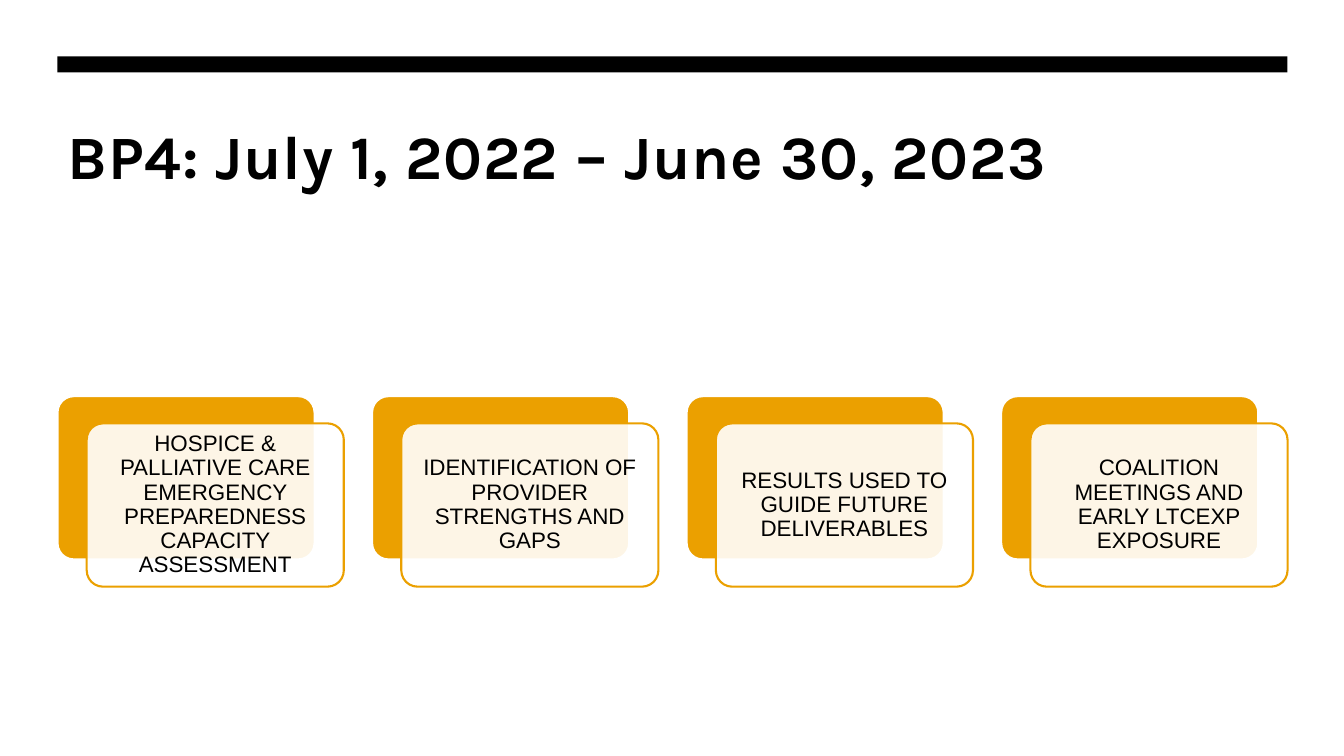
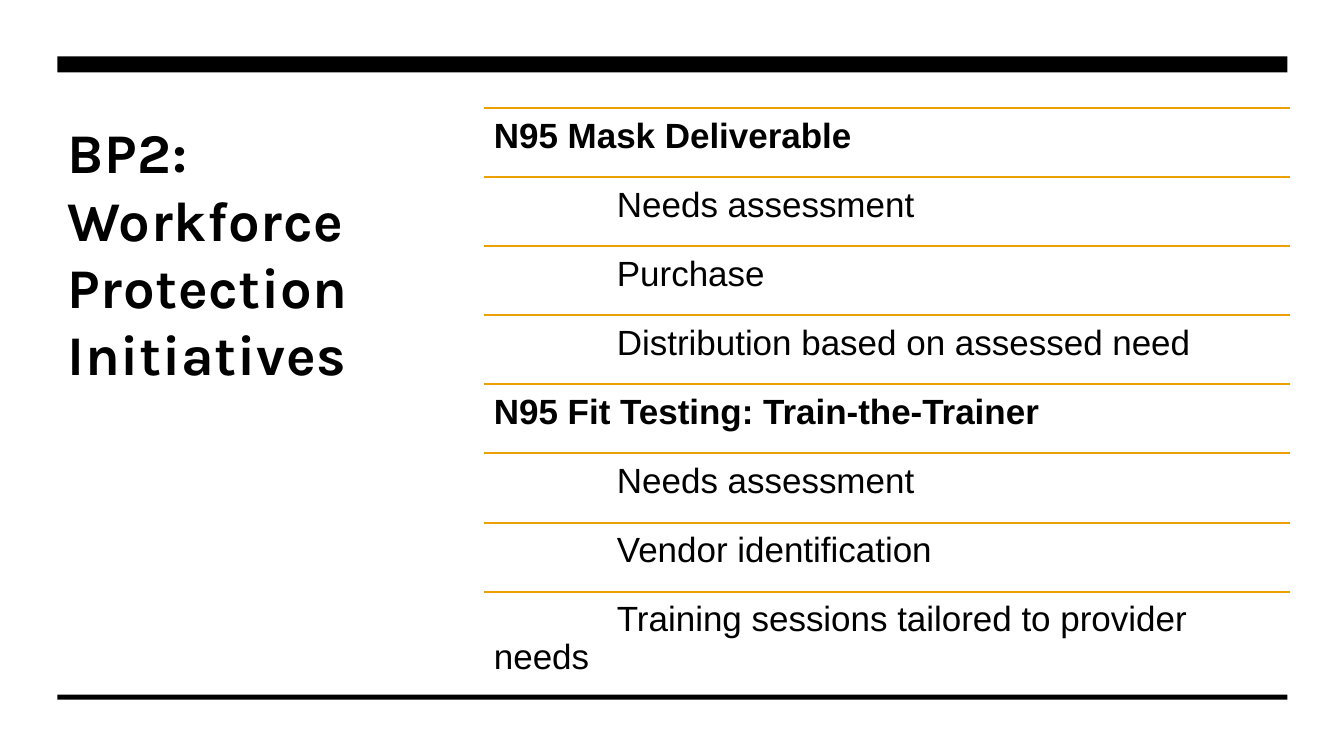
from dataclasses import dataclass

from lxml import etree
from pptx import Presentation
from pptx import util as u
from pptx.dml.color import RGBColor
from pptx.enum import shapes, text
from pptx.oxml.ns import qn


@dataclass(frozen=True)
class Theme:
    """Colours, fonts, type sizes and shared margins."""
    ink: str = "000000"
    paper: str = "FFFFFF"
    accent: str = "EBA000"
    title_font: str = "Karla"
    body_font: str = "Arial"
    title_size: int = 44
    side_title_size: int = 40
    card_size: int = 16
    row_size: int = 25
    line_width: float = 1.5
    left: float = 0.57
    width: float = 12.2


THEME = Theme()
STEPS = [
    "HOSPICE & PALLIATIVE CARE EMERGENCY PREPAREDNESS CAPACITY ASSESSMENT",
    "IDENTIFICATION OF PROVIDER STRENGTHS AND GAPS",
    "RESULTS USED TO GUIDE FUTURE DELIVERABLES",
    "COALITION MEETINGS AND EARLY LTCEXP EXPOSURE",
]
INITIATIVES = {
    "N95 Mask Deliverable": [
        "Needs assessment", "Purchase", "Distribution based on assessed need"],
    "N95 Fit Testing: Train‑the‑Trainer": [
        "Needs assessment", "Vendor identification",
        "Training sessions tailored to provider needs"],
}


def write(holder, wording, *, size, font=THEME.body_font, bold=False,
          align=text.PP_ALIGN.LEFT, anchor=text.MSO_ANCHOR.TOP,
          spacing=0.9, inset=0.1, first_indent=0, tracking=0):
    """Put one formatted paragraph into a shape, text box or placeholder."""
    frame = holder.text_frame
    frame.word_wrap = True
    frame.auto_size = text.MSO_AUTO_SIZE.NONE
    frame.vertical_anchor = anchor
    frame.margin_left = frame.margin_right = u.Inches(inset)
    frame.margin_top = frame.margin_bottom = u.Inches(min(inset, 0.1))
    paragraph = frame.paragraphs[0]
    paragraph.alignment = align
    paragraph.line_spacing = spacing
    if first_indent:
        paragraph._p.get_or_add_pPr().set("indent", str(u.Inches(first_indent)))
    run = paragraph.add_run()
    run.text = wording
    run.font.size = u.Pt(size)
    run.font.name = font
    run.font.bold = bold
    run.font.color.rgb = RGBColor.from_string(THEME.ink)
    if tracking:
        run._r.get_or_add_rPr().set("spc", str(tracking))


def add_title(slide, wording, width, height, size):
    """Place and format the slide title."""
    title = slide.shapes.title
    title.left, title.top = u.Inches(THEME.left), u.Inches(1.07)
    title.width, title.height = u.Inches(width), u.Inches(height)
    write(title, wording, size=size, font=THEME.title_font, bold=True,
          spacing=1.0, tracking=50)


def add_block(slide, kind, left, top, width, height, fill, line=None, opacity=100):
    """Draw a filled preset shape without a shadow."""
    block = slide.shapes.add_shape(
        kind, u.Inches(left), u.Inches(top), u.Inches(width), u.Inches(height))
    block.shadow.inherit = False
    block.fill.solid()
    block.fill.fore_color.rgb = RGBColor.from_string(fill)
    if opacity < 100:
        colour = block._element.spPr.find(qn("a:solidFill"))[0]
        etree.SubElement(colour, qn("a:alpha")).set("val", str(opacity * 1000))
    if line:
        block.line.color.rgb = RGBColor.from_string(line)
        block.line.width = u.Pt(THEME.line_width)
    else:
        block.line.fill.background()
    return block


def add_band(slide, top, height):
    """Draw a black band across the content width."""
    add_block(slide, shapes.MSO_SHAPE.RECTANGLE, THEME.left, top,
              THEME.width, height, THEME.ink)


def add_card(slide, left, top, wording):
    """Draw a coloured card with a translucent labelled card over it."""
    layers = [(0, 0, THEME.accent, THEME.paper, 100),
              (0.29, 0.27, THEME.paper, THEME.accent, 90)]
    for shift_x, shift_y, fill, line, opacity in layers:
        card = add_block(slide, shapes.MSO_SHAPE.ROUNDED_RECTANGLE,
                         left + shift_x, top + shift_y, 2.55, 1.62,
                         fill, line, opacity)
        card.adjustments[0] = 0.1
    write(card, wording, size=THEME.card_size, inset=0.07,
          align=text.PP_ALIGN.CENTER, anchor=text.MSO_ANCHOR.MIDDLE)


def add_row(slide, top, height, wording, heading):
    """Draw a rule with one line of the list below it."""
    left, width = 4.8, 7.99
    rule = slide.shapes.add_connector(
        shapes.MSO_CONNECTOR.STRAIGHT, u.Inches(left), u.Inches(top),
        u.Inches(left + width), u.Inches(top))
    rule.line.color.rgb = RGBColor.from_string(THEME.accent)
    rule.line.width = u.Pt(THEME.line_width)
    etree.SubElement(rule._element.spPr, qn("a:effectLst"))
    row = slide.shapes.add_textbox(
        u.Inches(left), u.Inches(top), u.Inches(width), u.Inches(height))
    write(row, wording, size=THEME.row_size, bold=heading,
          first_indent=0 if heading else 1.22)


def new_slide(deck):
    """Add a title-only slide with the top band."""
    slide = deck.slides.add_slide(deck.slide_layouts[5])
    add_band(slide, 0.56, 0.16)
    return slide


def build_steps(deck):
    """Build the slide with the row of step cards."""
    slide = new_slide(deck)
    add_title(slide, "BP4: July 1, 2022 – June 30, 2023", THEME.width, 1.6,
              THEME.title_size)
    for index, step in enumerate(STEPS):
        add_card(slide, THEME.left + 3.12 * index, 3.93, step)


def build_initiatives(deck):
    """Build the slide with the ruled list of initiatives."""
    slide = new_slide(deck)
    add_band(slide, 6.89, 0.05)
    add_title(slide, "BP2: Workforce Protection Initiatives", 3.45, 4.45,
              THEME.side_title_size)
    rows = [(wording, wording == heading)
            for heading, items in INITIATIVES.items()
            for wording in [heading, *items]]
    pitch = 4.8 / (len(rows) - 1)
    for index, (wording, heading) in enumerate(rows):
        add_row(slide, 1.07 + pitch * index, pitch, wording, heading)


def main():
    """Build and save the deck."""
    deck = Presentation()
    deck.slide_width, deck.slide_height = u.Inches(13.33), u.Inches(7.5)
    build_steps(deck)
    build_initiatives(deck)
    deck.save("out.pptx")


if __name__ == "__main__":
    main()
